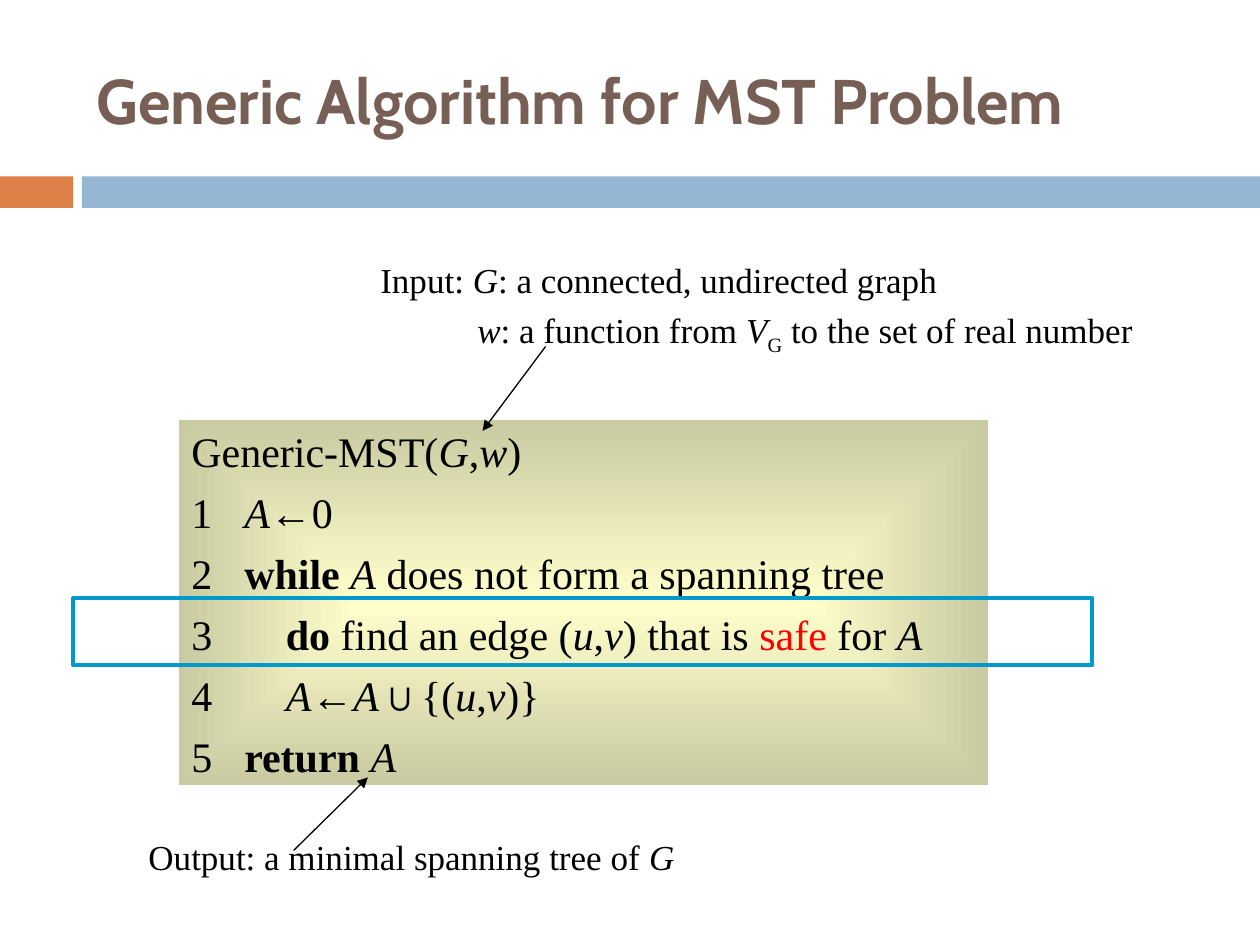
from dataclasses import dataclass

from lxml.etree import SubElement
from pptx import Presentation
from pptx.dml.color import RGBColor
from pptx.enum.shapes import MSO_CONNECTOR as Connector, MSO_SHAPE as Shape
from pptx.enum.text import MSO_ANCHOR as Anchor, PP_ALIGN as Align
from pptx.oxml.ns import qn
from pptx.util import Inches, Pt


@dataclass(frozen=True)
class Theme:
    """Colours, fonts and type sizes of the slide."""
    title: str = "775F55"
    orange: str = "DD8047"
    blue: str = "94B6D2"
    ink: str = "000000"
    safe: str = "FF0000"
    highlight: str = "0099CC"
    code_center: str = "FFFFCC"
    code_edge: str = "CACAA2"
    title_font: str = "Cabin"
    body_font: str = "Times New Roman"
    title_size: int = 36
    code_size: int = 24
    note_size: int = 20


THEME = Theme()
STEP, NESTED, INPUT_INDENT = 0.42, 0.75, 0.77

CODE_LINES = [
    (0, [("Generic-MST(", ""), ("G", "i"), (",", ""), ("w", "i"), (")", "")]),
    (STEP, [("1\t", ""), ("A", "i"), ("←0", "")]),
    (STEP, [("2\t", ""), ("while ", "b"), ("A", "i"),
            (" does not form a spanning tree", "")]),
    (NESTED, [("3\t", ""), ("do", "b"), (" find an edge (", ""), ("u", "i"),
              (",", ""), ("v", "i"), (") that is ", ""), ("safe", "safe"),
              (" for ", ""), ("A", "i")]),
    (NESTED, [("4\t", ""), ("A", "i"), ("←", ""), ("A", "i"), ("∪{(", ""),
              ("u", "i"), (",", ""), ("v", "i"), (")}", "")]),
    (STEP, [("5\t", ""), ("return ", "b"), ("A", "i")]),
]
INPUT_LINES = [
    (0, [("Input: ", ""), ("G", "i"), (": a connected, undirected graph", "")]),
    (INPUT_INDENT, [("\t", ""), ("w", "i"), (": a function from ", ""),
                    ("V", "i"), ("G", "sub"),
                    (" to the set of real number", "")]),
]
OUTPUT_LINES = [(0, [("Output: a minimal spanning tree of ", ""), ("G", "i")])]


def color(name):
    """Return the theme colour of the given name."""
    return RGBColor.from_string(getattr(THEME, name))


def add_run(paragraph, text, style, size, font, ink="ink"):
    """Append one styled run to a paragraph."""
    run = paragraph.add_run()
    run.text = text
    run.font.name = font
    run.font.size = Pt(size)
    run.font.bold = style == "b"
    run.font.italic = style == "i"
    run.font.color.rgb = color("safe" if style == "safe" else ink)
    if style == "sub":
        run.font._element.set("baseline", "-25000")


def write_lines(shape, lines, size):
    """Write lines of runs with hanging indents into a shape."""
    frame = shape.text_frame
    frame.word_wrap = True
    frame.vertical_anchor = Anchor.TOP
    for index, (indent, runs) in enumerate(lines):
        paragraph = frame.add_paragraph() if index else frame.paragraphs[0]
        paragraph.alignment = Align.LEFT
        paragraph.space_before = Pt(size / 4 if index else 2)
        properties = paragraph._p.get_or_add_pPr()
        properties.set("marL", str(Inches(indent)))
        properties.set("indent", str(-Inches(indent)))
        for text, style in runs:
            add_run(paragraph, text, style, size, THEME.body_font)


def add_rectangle(slide, box, fill=None, line=None):
    """Add a rectangle with an optional fill and outline."""
    shape = slide.shapes.add_shape(Shape.RECTANGLE, *map(Inches, box))
    shape.shadow.inherit = False
    if fill:
        shape.fill.solid()
        shape.fill.fore_color.rgb = color(fill)
    else:
        shape.fill.background()
    if line:
        shape.line.color.rgb = color(line)
        shape.line.width = Pt(2.25)
    else:
        shape.line.fill.background()
    return shape


def add_title(slide, box):
    """Add the slide title."""
    frame = slide.shapes.add_textbox(*map(Inches, box)).text_frame
    frame.word_wrap = True
    frame.vertical_anchor = Anchor.MIDDLE
    add_run(frame.paragraphs[0], "Generic Algorithm for MST Problem", "b",
            THEME.title_size, THEME.title_font, "title")


def add_band(slide, box, accent_width=0.58, gap=0.07):
    """Add the two-coloured band below the title."""
    left, top, width, height = box
    offset = accent_width + gap
    add_rectangle(slide, (left, top, accent_width, height), "orange")
    add_rectangle(slide, (left + offset, top, width - offset, height), "blue")


def add_code(slide, box):
    """Add the pseudocode panel with its gradient from centre to edge."""
    panel = add_rectangle(slide, box)
    panel.fill.gradient()
    for stop, name in zip(panel.fill.gradient_stops, ("code_center", "code_edge")):
        stop.color.rgb = color(name)
    gradient = panel._element.spPr.find(qn("a:gradFill"))
    gradient.remove(gradient.find(qn("a:lin")))
    path = SubElement(gradient, qn("a:path"), {"path": "shape"})
    SubElement(path, qn("a:fillToRect"), dict.fromkeys("ltrb", "50000"))
    write_lines(panel, CODE_LINES, THEME.code_size)


def add_note(slide, box, lines, start, end):
    """Add a note and the arrow that ties it to the pseudocode."""
    textbox = slide.shapes.add_textbox(*map(Inches, box))
    write_lines(textbox, lines, THEME.note_size)
    arrow = slide.shapes.add_connector(Connector.STRAIGHT, *map(Inches, start + end))
    arrow.line.color.rgb = color("ink")
    arrow.line.width = Pt(0.75)
    SubElement(arrow.line._get_or_add_ln(), qn("a:tailEnd"), {"type": "triangle"})
    SubElement(arrow._element.spPr, qn("a:effectLst"))


def main():
    """Build and save the slide."""
    presentation = Presentation()
    presentation.slide_width = Inches(10)
    presentation.slide_height = Inches(7.5)
    slide = presentation.slides.add_slide(presentation.slide_layouts[6])
    add_band(slide, (0, 1.4, 10, 0.25))
    add_code(slide, (1.42, 3.33, 6.42, 2.9))
    add_note(slide, (2.92, 2, 6.33, 0.83), INPUT_LINES, (4.33, 2.75), (3.83, 3.42))
    add_note(slide, (1.08, 6.58, 6.33, 0.43), OUTPUT_LINES, (2.33, 6.75), (2.92, 6.17))
    add_rectangle(slide, (0.58, 4.75, 8.09, 0.53), line="highlight")
    add_title(slide, (0.67, 0.25, 8.92, 1.08))
    presentation.save("out.pptx")


if __name__ == "__main__":
    main()
